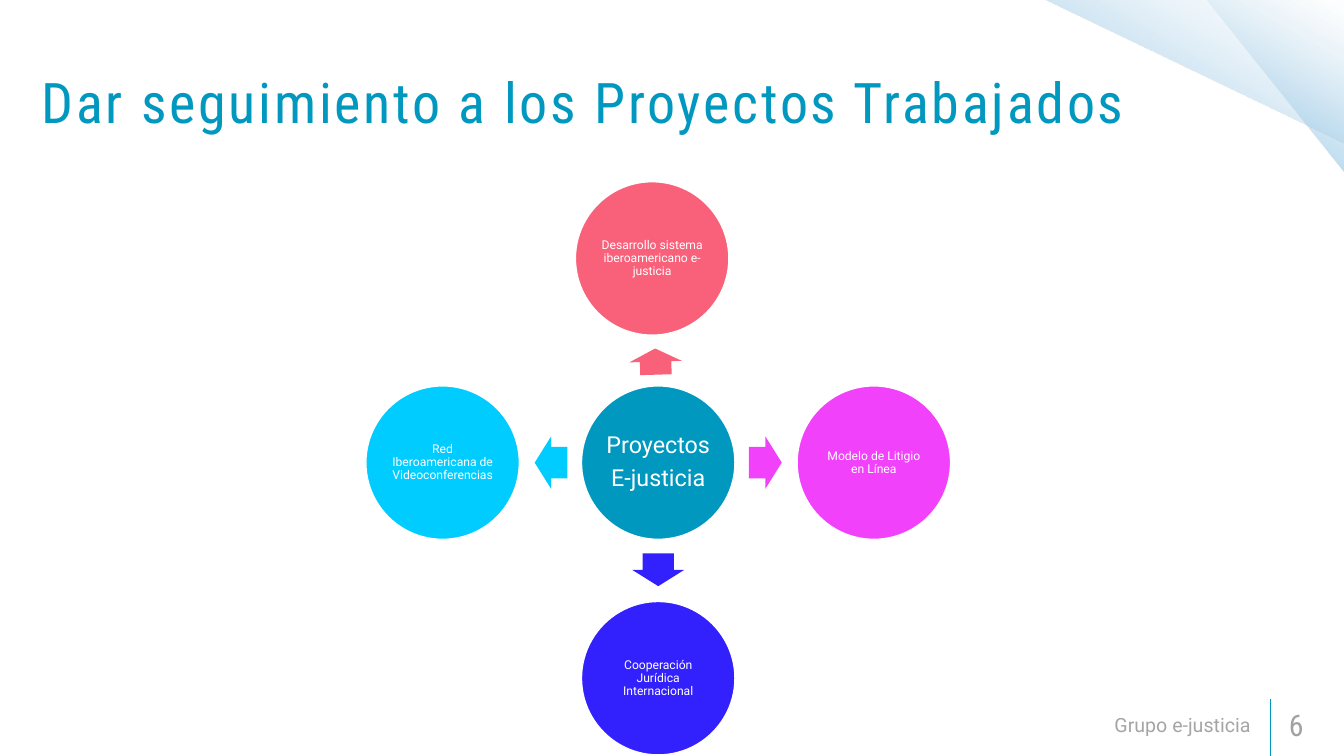
from dataclasses import dataclass

from lxml import etree
from pptx import Presentation
from pptx.dml.color import RGBColor
from pptx.enum.shapes import MSO_CONNECTOR, MSO_SHAPE
from pptx.enum.text import MSO_ANCHOR as Anchor, PP_ALIGN as Align
from pptx.oxml import parse_xml
from pptx.oxml.ns import nsdecls, qn
from pptx.util import Cm, Pt

TEAL = RGBColor(0x00, 0x98, 0xBF)
CORAL = RGBColor(0xF9, 0x61, 0x7A)
MAGENTA = RGBColor(0xF2, 0x41, 0xFA)
BLUE = RGBColor(0x32, 0x21, 0xFC)
CYAN = RGBColor(0x00, 0xCC, 0xFF)
WHITE = RGBColor(0xFF, 0xFF, 0xFF)
FOOTER_GRAY = RGBColor(0x80, 0x80, 0x80)
NUMBER_GRAY = RGBColor(0xA2, 0xA2, 0xA2)

BODY_FONT = "Roboto"
HEAD_FONT = "Roboto Condensed"

DIAMETER = 5.82
ARROW_WIDTH = 1.98
HUB_X, HUB_Y = 24.88, 17.49
ORBIT = 8.15
ARROW_ORBIT = 4.05

CORNER_GRADIENT = (
    f'<a:gradFill {nsdecls("a")} rotWithShape="1"><a:gsLst>'
    '<a:gs pos="0"><a:srgbClr val="8FC8E8"/></a:gs>'
    '<a:gs pos="50000"><a:srgbClr val="A4CEE9"><a:alpha val="44000"/></a:srgbClr></a:gs>'
    '<a:gs pos="100000"><a:srgbClr val="DEEDF6"><a:alpha val="0"/></a:srgbClr></a:gs>'
    '</a:gsLst><a:lin ang="7200000" scaled="0"/></a:gradFill>'
)


@dataclass
class Circle:
    text: str
    color: RGBColor
    x: float
    y: float
    size: int = 13
    inset: float = 0.05


@dataclass
class Arrow:
    color: RGBColor
    x: float
    y: float
    rotation: float
    length: float = 1.24


@dataclass
class Label:
    text: str
    left: float
    top: float
    width: float
    height: float
    size: int
    font: str
    color: RGBColor
    align: Align = Align.LEFT
    anchor: Anchor = Anchor.MIDDLE
    inset_x: float = 0.46
    inset_y: float = 0.23


CIRCLES = [
    Circle("Proyectos\nE-justicia", TEAL, HUB_X, HUB_Y, 25, 0.08),
    Circle("Desarrollo sistema iberoamericano e-justicia", CORAL, 24.65, 9.77),
    Circle("Modelo de Litigio en Línea", MAGENTA, HUB_X + ORBIT, HUB_Y),
    Circle("Cooperación Jurídica Internacional", BLUE, HUB_X, HUB_Y + ORBIT),
    Circle("Red Iberoamericana de Videoconferencias", CYAN, HUB_X - ORBIT, HUB_Y),
]
ARROWS = [
    Arrow(CORAL, 24.78, 13.67, 268.3, 0.99),
    Arrow(MAGENTA, HUB_X + ARROW_ORBIT, HUB_Y, 0),
    Arrow(BLUE, HUB_X, HUB_Y + ARROW_ORBIT, 90),
    Arrow(CYAN, HUB_X - ARROW_ORBIT, HUB_Y, 180),
]
TITLE = Label("Dar seguimiento a los Proyectos Trabajados", 1.32, 2.41, 47, 2.49,
              60, HEAD_FONT, TEAL, anchor=Anchor.TOP, inset_x=0.25, inset_y=0.13)
FOOTER = Label("Grupo e-justicia", 26.14, 26.64, 21.59, 1.52,
               21, BODY_FONT, FOOTER_GRAY, Align.RIGHT)
PAGE_NUMBER = Label("6", 48.26, 26.64, 2.51, 1.52, 32, HEAD_FONT, NUMBER_GRAY)


def write_text(frame, text: str, size: int, font: str, color: RGBColor,
               align: Align, anchor: Anchor, inset_x: float, inset_y: float) -> None:
    frame.word_wrap = True
    frame.vertical_anchor = anchor
    frame.margin_left = frame.margin_right = Cm(inset_x)
    frame.margin_top = frame.margin_bottom = Cm(inset_y)
    frame.text = text
    for paragraph in frame.paragraphs:
        paragraph.alignment = align
        for run in paragraph.runs:
            run.font.size = Pt(size)
            run.font.name = font
            run.font.color.rgb = color


def add_label(slide, label: Label):
    box = slide.shapes.add_textbox(Cm(label.left), Cm(label.top),
                                   Cm(label.width), Cm(label.height))
    write_text(box.text_frame, label.text, label.size, label.font, label.color,
               label.align, label.anchor, label.inset_x, label.inset_y)
    return box.text_frame.paragraphs[0].runs[0]


def add_centered(slide, kind: MSO_SHAPE, x: float, y: float,
                 width: float, height: float, color: RGBColor):
    shape = slide.shapes.add_shape(kind, Cm(x - width / 2), Cm(y - height / 2),
                                   Cm(width), Cm(height))
    shape.shadow.inherit = False
    shape.fill.solid()
    shape.fill.fore_color.rgb = color
    return shape


def add_circle(slide, circle: Circle) -> None:
    disc = add_centered(slide, MSO_SHAPE.OVAL, circle.x, circle.y,
                        DIAMETER, DIAMETER, circle.color)
    disc.line.color.rgb = WHITE
    disc.line.width = Pt(2)
    write_text(disc.text_frame, circle.text, circle.size, BODY_FONT, WHITE,
               Align.CENTER, Anchor.MIDDLE, circle.inset, circle.inset)
    for paragraph in disc.text_frame.paragraphs:
        paragraph.line_spacing = 0.9
        paragraph.space_after = Pt(round(circle.size * 0.35))


def add_arrow(slide, arrow: Arrow) -> None:
    pointer = add_centered(slide, MSO_SHAPE.RIGHT_ARROW, arrow.x, arrow.y,
                           arrow.length, ARROW_WIDTH, arrow.color)
    pointer.adjustments[0] = 0.6
    pointer.adjustments[1] = 0.5
    pointer.rotation = arrow.rotation
    pointer.line.fill.background()


def add_corner(slide, left: float, width: float, height: float) -> None:
    corner = slide.shapes.add_shape(MSO_SHAPE.RIGHT_TRIANGLE, Cm(left), Cm(0),
                                    Cm(width), Cm(height))
    corner.rotation = 180
    corner.shadow.inherit = False
    corner.line.fill.background()
    geometry = corner.element.spPr.find(qn("a:prstGeom"))
    geometry.addnext(parse_xml(CORNER_GRADIENT))


def add_divider(slide) -> None:
    divider = slide.shapes.add_connector(MSO_CONNECTOR.STRAIGHT, Cm(48.03), Cm(28.58),
                                         Cm(48.03), Cm(26.42))
    divider.line.color.rgb = TEAL
    divider.line.width = Pt(1)
    etree.SubElement(divider.element.spPr, qn("a:effectLst"))


def main() -> None:
    deck = Presentation()
    deck.slide_width, deck.slide_height = Cm(50.8), Cm(28.58)
    slide = deck.slides.add_slide(deck.slide_layouts[6])

    add_divider(slide)
    add_corner(slide, 45.62, 5.18, 6.53)
    add_corner(slide, 39.47, 11.38, 5.41)

    footer = add_label(slide, FOOTER)
    footer_color = footer.font.element if hasattr(footer.font, "element") else footer._r.rPr
    etree.SubElement(footer_color.find(".//" + qn("a:srgbClr")), qn("a:alpha"), val="70000")
    add_label(slide, PAGE_NUMBER)

    for circle in CIRCLES:
        add_circle(slide, circle)
    for arrow in ARROWS:
        add_arrow(slide, arrow)

    title = add_label(slide, TITLE)
    title._r.get_or_add_rPr().set("spc", "300")
    deck.save("out.pptx")


if __name__ == "__main__":
    main()
